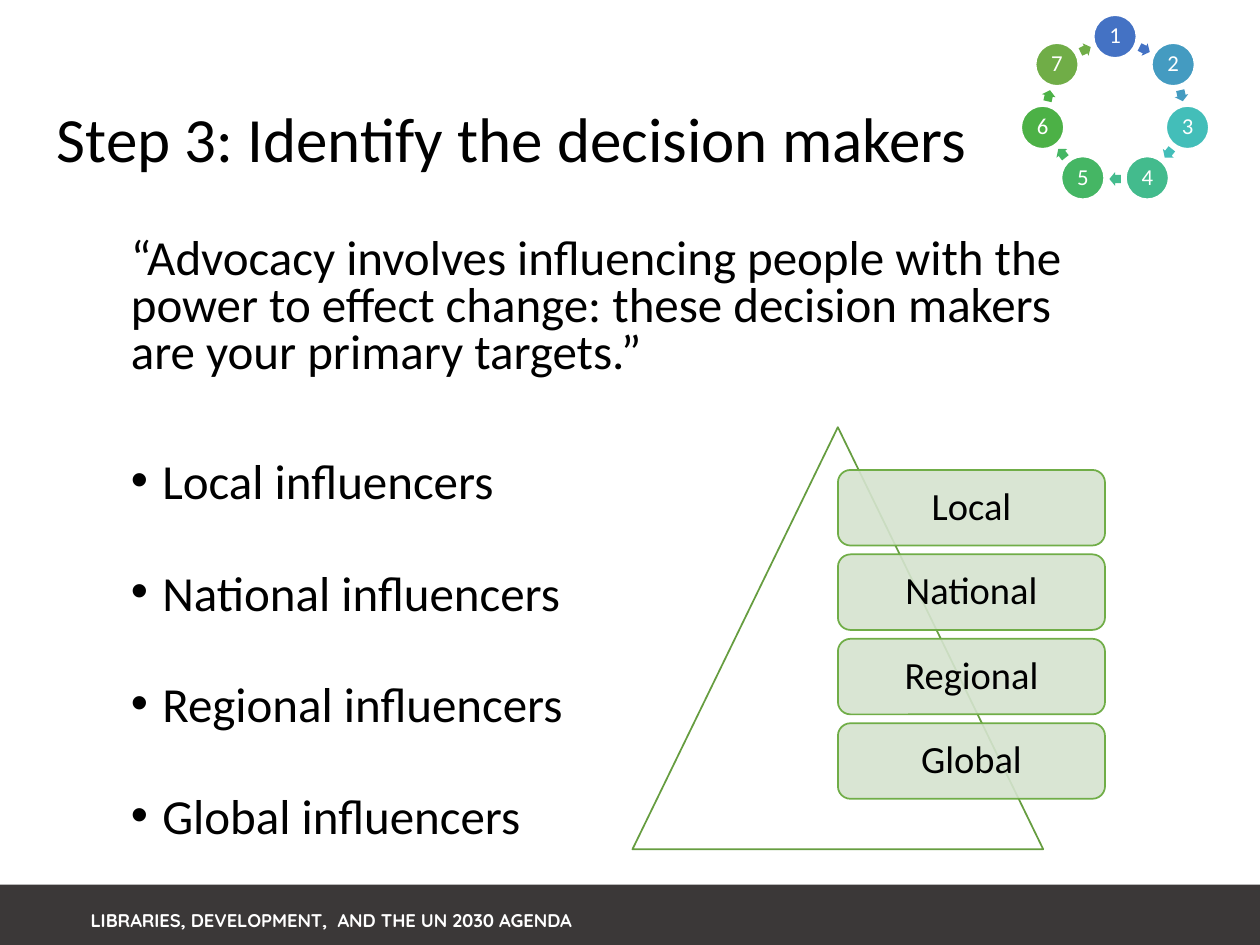
from math import cos, pi, sin

from lxml.etree import SubElement
from pptx import Presentation
from pptx.dml.color import RGBColor
from pptx.enum.shapes import MSO_SHAPE as Shape
from pptx.enum.text import MSO_ANCHOR as Anchor, PP_ALIGN as Align
from pptx.oxml.ns import qn
from pptx.util import Inches, Pt

# Content
TITLE = "Step 3: Identify the decision makers"
QUOTE = ("“Advocacy involves influencing people with the power to effect change: "
         "these decision makers\vare your primary targets.”")
INFLUENCERS = ["Local influencers", "National influencers",
               "Regional influencers", "Global influencers"]
LEVELS = ["Local", "National", "Regional", "Global"]
FOOTER = "LIBRARIES, DEVELOPMENT,  AND THE UN 2030 AGENDA"

BLACK = RGBColor(0x00, 0x00, 0x00)
WHITE = RGBColor(0xFF, 0xFF, 0xFF)
DARK_GRAY = RGBColor(0x3B, 0x38, 0x38)
GREEN = RGBColor(0x70, 0xAD, 0x47)
DARK_GREEN = RGBColor(0x66, 0x9D, 0x40)
PALE_GREEN = RGBColor(0xD5, 0xE3, 0xCF)
STEP_COLORS = [RGBColor(0x44, 0x72, 0xC4), RGBColor(0x44, 0x9B, 0xC1),
               RGBColor(0x43, 0xBE, 0xB9), RGBColor(0x43, 0xBB, 0x8D),
               RGBColor(0x45, 0xB6, 0x64), RGBColor(0x4C, 0xB1, 0x46), GREEN]


def set_font(paragraph, size, color, name="Calibri", bold=False):
    font = paragraph.font
    font.name, font.size, font.bold = name, Pt(size), bold
    font.color.rgb = color


def add_shape(kind, left, top, width, height, fill, line=None):
    shape = slide.shapes.add_shape(
        kind, Inches(left), Inches(top), Inches(width), Inches(height))
    shape.shadow.inherit = False
    shape.fill.solid()
    shape.fill.fore_color.rgb = fill
    if line is None:
        shape.line.fill.background()
    else:
        shape.line.color.rgb = line
        shape.line.width = Pt(1)
    return shape


def add_text_box(left, top, width, height):
    box = slide.shapes.add_textbox(
        Inches(left), Inches(top), Inches(width), Inches(height))
    box.text_frame.word_wrap = True
    return box.text_frame


def add_label(shape, text, size, color, inset):
    frame = shape.text_frame
    frame.margin_left = frame.margin_right = Inches(inset)
    frame.margin_top = frame.margin_bottom = Inches(inset)
    frame.vertical_anchor = Anchor.MIDDLE
    paragraph = frame.paragraphs[0]
    paragraph.text = text
    paragraph.alignment = Align.CENTER
    paragraph.line_spacing = 0.9
    set_font(paragraph, size, color)


def add_bullet(paragraph):
    properties = paragraph._p.get_or_add_pPr()
    properties.set("marL", str(Inches(0.25)))
    properties.set("indent", str(Inches(-0.25)))
    SubElement(properties, qn("a:buFont")).set("typeface", "Arial")
    SubElement(properties, qn("a:buChar")).set("char", "•")


presentation = Presentation()
presentation.slide_width, presentation.slide_height = Inches(10), Inches(7.5)
slide = presentation.slides.add_slide(presentation.slide_layouts[5])

# Footer band
add_shape(Shape.RECTANGLE, 0, 7.02, 10, 0.48, DARK_GRAY)
paragraph = add_text_box(0.62, 6.98, 7.09, 0.47).paragraphs[0]
paragraph.text = FOOTER
paragraph.line_spacing = Pt(26)
set_font(paragraph, 10.5, WHITE, "Quicksand", True)

# Title
title = slide.shapes.title
title.left, title.top = Inches(0.35), Inches(0.4)
title.width, title.height = Inches(8.96), Inches(1.45)
title.text_frame.text = TITLE
title.text_frame.vertical_anchor = Anchor.MIDDLE
paragraph = title.text_frame.paragraphs[0]
paragraph.alignment = Align.LEFT
paragraph.line_spacing = 0.9
set_font(paragraph, 36, BLACK)

# Quote and influencers
body = add_text_box(0.94, 1.84, 8.38, 4.91)
body.text = QUOTE
for index, influencer in enumerate(INFLUENCERS):
    paragraph = body.add_paragraph()
    paragraph.text = influencer
    paragraph.space_before = Pt(37 if index else 47)
    add_bullet(paragraph)
for paragraph in body.paragraphs:
    paragraph.line_spacing = 0.8
    set_font(paragraph, 28, BLACK)

# Pyramid with its levels
add_shape(Shape.ISOSCELES_TRIANGLE, 5.02, 3.39, 3.26, 3.35, WHITE, DARK_GREEN)
for index, level in enumerate(LEVELS):
    card = add_shape(Shape.ROUNDED_RECTANGLE, 6.65, 3.73 + 0.67 * index,
                     2.12, 0.6, PALE_GREEN, GREEN)
    fill_color = card.fill._xPr.find(qn("a:solidFill"))[0]
    SubElement(fill_color, qn("a:alpha")).set("val", "90000")
    add_label(card, level, 22, BLACK, 0.09)

# Ring of steps, each followed by an arrow to the next
CENTER_X, CENTER_Y, RADIUS, ARROW_RADIUS = 8.85, 0.88, 0.59, 0.54
DIAMETER, ARROW_WIDTH, ARROW_HEIGHT = 0.34, 0.09, 0.11
STEP_ANGLE = 2 * pi / len(STEP_COLORS)


def ring_position(turn, radius, width, height):
    angle = turn * STEP_ANGLE
    return (CENTER_X + radius * sin(angle) - width / 2,
            CENTER_Y - radius * cos(angle) - height / 2, width, height)


for index, color in enumerate(STEP_COLORS):
    circle = add_shape(Shape.OVAL, *ring_position(index, RADIUS, DIAMETER, DIAMETER),
                       color, WHITE)
    circle.text_frame.word_wrap = False
    add_label(circle, str(index + 1), 13, WHITE, 0.02)
    turn = index + 0.5
    arrow = add_shape(Shape.RIGHT_ARROW,
                      *ring_position(turn, ARROW_RADIUS, ARROW_WIDTH, ARROW_HEIGHT), color)
    arrow.adjustments[0], arrow.adjustments[1] = 0.6, 0.5
    arrow.rotation = turn * 360 / len(STEP_COLORS)

presentation.save("out.pptx")
